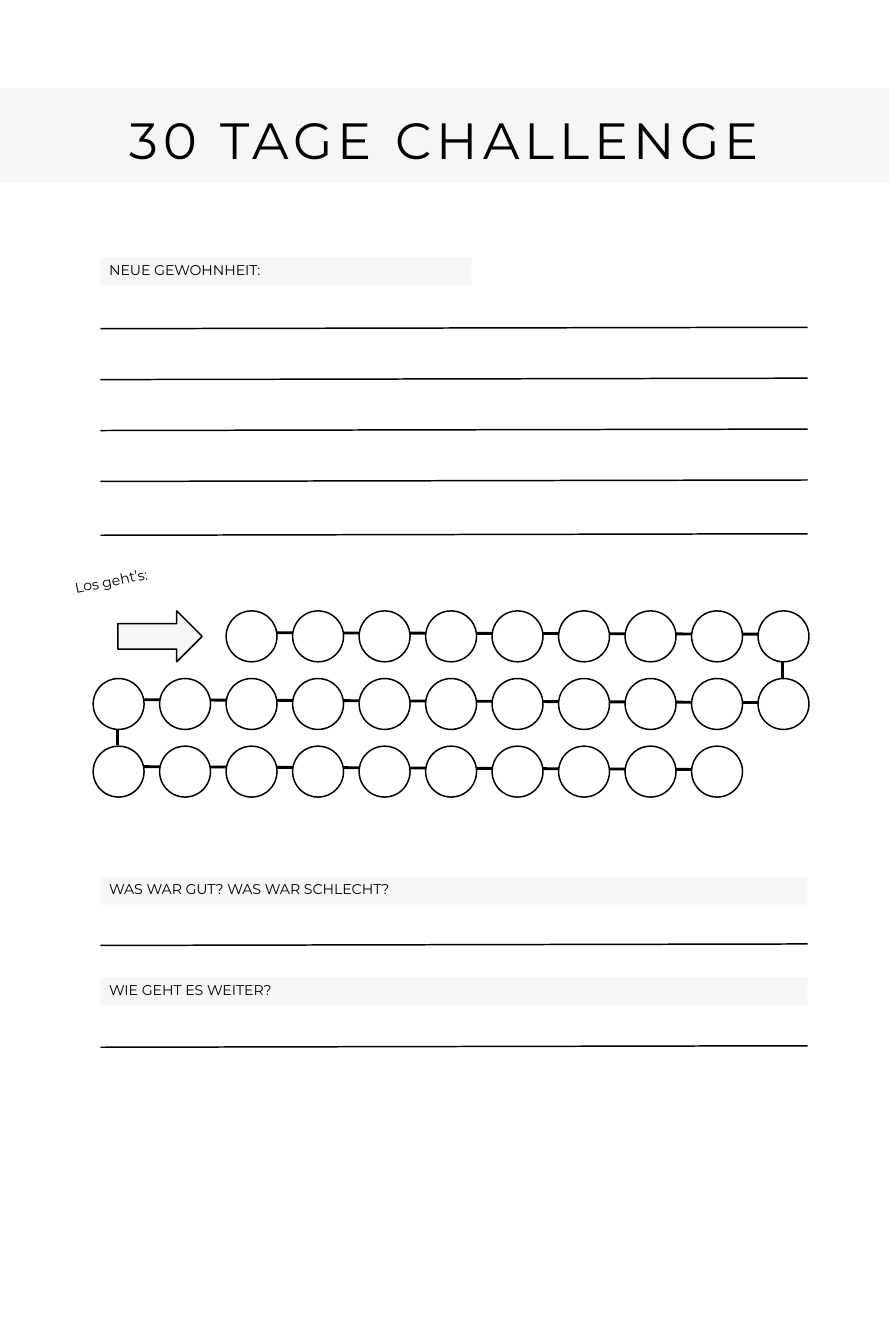
from pptx import Presentation, util as u
from pptx.dml.color import RGBColor
from pptx.enum import shapes, text
from pptx.oxml.ns import qn
from lxml import etree

# Content
TITLE = "30 TAGE CHALLENGE"
START = "Los geht’s:"
LABELS = [  # text, top, width
    ("NEUE GEWOHNHEIT:", 1.77, 2.55),
    ("WAS WAR GUT? WAS WAR SCHLECHT?", 6.03, 4.86),
    ("WIE GEHT ES WEITER?", 6.72, 4.86),
]
DAY_ROWS = [(2, 9), (0, 11), (0, 10)]  # first column, number of days
LINKS = [  # chain lines behind the circles: x1, y1, x2, y2
    (1.67, 4.35, 5.21, 4.36), (0.76, 4.81, 5.21, 4.83), (0.76, 5.27, 4.75, 5.29),
    (5.38, 4.37, 5.38, 4.84), (0.81, 4.84, 0.81, 5.12),
]

# Layout and style
WIDTH, HEIGHT = 6.11, 9.24
LEFT, RIGHT = 0.69, 5.55
CHAIN_LEFT, CHAIN_RIGHT = 0.64, 5.21
CHAIN_TOP, CHAIN_BOTTOM = 4.2, 5.13
DAY = 0.35
COLUMN = (CHAIN_RIGHT - CHAIN_LEFT) / 10
ROW = (CHAIN_BOTTOM - CHAIN_TOP) / 2
WRITING_LINES = [2.26 + 0.35 * i for i in range(4)] + [3.68, 6.5, 7.2]
SLANT = 0.01  # the writing lines rise slightly to the right
BLACK, WHITE, GREY = "000000", "FFFFFF", "F6F6F6"
FONT = "Montserrat"

prs = Presentation()
prs.slide_width, prs.slide_height = u.Inches(WIDTH), u.Inches(HEIGHT)
s = prs.slides.add_slide(prs.slide_layouts[5])


def color(value):
    return RGBColor.from_string(value)


def set_all(target, values):
    for name, value in values.items():
        setattr(target, name, value)


def place(sp, x, y, w, h):
    set_all(sp, dict(left=u.Inches(x), top=u.Inches(y), width=u.Inches(w), height=u.Inches(h)))


def paint(sp, fill):
    sp.fill.solid()
    sp.fill.fore_color.rgb = color(fill)


def add_line(x1, y1, x2, y2, weight=0.75):
    c = s.shapes.add_connector(shapes.MSO_CONNECTOR.STRAIGHT,
                               *map(u.Inches, (x1, y1, x2, y2)))
    c.line.color.rgb = color(BLACK)
    c.line.width = u.Pt(weight)
    etree.SubElement(c._element.spPr, qn("a:effectLst"))


def add_shape(kind, x, y, w, h, fill, outline=True):
    sp = s.shapes.add_shape(kind, *map(u.Inches, (x, y, w, h)))
    sp.shadow.inherit = False
    paint(sp, fill)
    if outline:
        sp.line.color.rgb = color(BLACK)
        sp.line.width = u.Pt(0.75)
    else:
        sp.line.fill.background()
    return sp


def write(sp, words, size, leading, align, inset_left=0, inset_top=0, spacing=0):
    tf = sp.text_frame
    set_all(tf, dict(word_wrap=True, auto_size=text.MSO_AUTO_SIZE.NONE,
                     vertical_anchor=text.MSO_ANCHOR.TOP,
                     margin_left=u.Inches(inset_left), margin_top=u.Inches(inset_top),
                     margin_right=0, margin_bottom=0))
    p = tf.paragraphs[0]
    set_all(p, dict(alignment=align, line_spacing=u.Pt(leading)))
    r = p.add_run()
    r.text = words
    set_all(r.font, dict(name=FONT, size=u.Pt(size)))
    r.font.color.rgb = color(BLACK)
    if spacing:
        r._r.get_or_add_rPr().set("spc", str(int(spacing * 100)))


# Title band
title = s.shapes.title
place(title, 0, 0.61, WIDTH, 0.64)
paint(title, GREY)
write(title, TITLE, 25.2, 35.3, text.PP_ALIGN.CENTER, inset_top=0.07, spacing=2.5)

# Writing lines
for y in WRITING_LINES:
    add_line(LEFT, y, RIGHT, y - SLANT)

# Chain of 30 days
for link in LINKS:
    add_line(*link, weight=1.43)
for row, (first, count) in enumerate(DAY_ROWS):
    for column in range(first, first + count):
        add_shape(shapes.MSO_SHAPE.OVAL, CHAIN_LEFT + column * COLUMN,
                  CHAIN_TOP + row * ROW, DAY, DAY, WHITE)

# Start arrow and its caption
add_shape(shapes.MSO_SHAPE.RIGHT_ARROW, 0.81, CHAIN_TOP, 0.58, DAY, GREY)
caption = s.shapes.add_textbox(*map(u.Inches, (0.5, 3.82, 1.51, 0.13)))
caption.rotation = 349
write(caption, START, 7, 9.8, text.PP_ALIGN.LEFT)

# Section labels
for words, y, w in LABELS:
    label = add_shape(shapes.MSO_SHAPE.RECTANGLE, LEFT, y, w, 0.19, GREY, outline=False)
    write(label, words, 7, 8, text.PP_ALIGN.LEFT, inset_left=0.06, inset_top=0.03)

prs.save("out.pptx")
